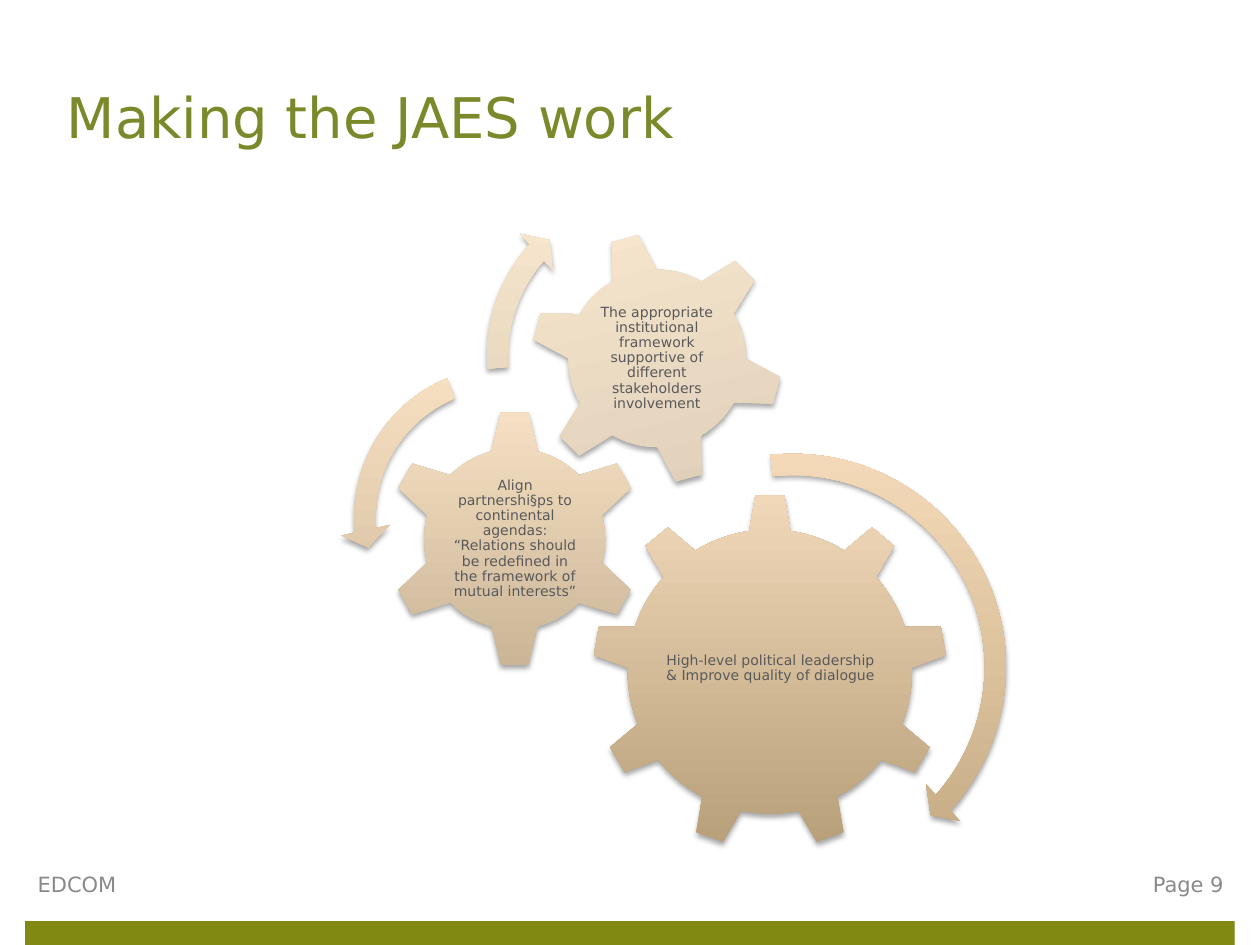
from dataclasses import dataclass

import lxml.etree
import pptx
import pptx.dml.color
import pptx.enum.shapes
import pptx.enum.text
import pptx.oxml.ns
import pptx.util

Cm = pptx.util.Cm
Kind = pptx.enum.shapes.MSO_SHAPE
Align = pptx.enum.text.PP_ALIGN


@dataclass(frozen=True)
class Theme:
    font: str = "DejaVu Sans"
    head: str = "7C892B"
    body: str = "595959"
    foot: str = "898989"
    bar: str = "828912"
    shade: str = "000000"
    dim: str = "808080"
    large: int = 32
    small: int = 12
    tiny: int = 8


@dataclass(frozen=True)
class Box:
    left: float
    top: float
    width: float
    height: float

    def place(self) -> tuple:
        return Cm(self.left), Cm(self.top), Cm(self.width), Cm(self.height)


@dataclass(frozen=True)
class Gear:
    kind: Kind
    box: Box
    dark: str
    light: str
    text: str
    label: Box
    turn: float = 0


@dataclass(frozen=True)
class Arrow:
    kind: Kind
    box: Box
    dark: str
    light: str
    band: float
    angles: tuple[float, float, float]
    tip: float


THEME = Theme()

GEARS = [
    Gear(Kind.GEAR_9, Box(11.94, 9.96, 7.16, 7.16), "B79F79", "F0D8B9",
         "High-level political leadership & Improve quality of dialogue",
         Box(13.39, 11.63, 4.29, 3.68)),
    Gear(Kind.GEAR_6, Box(7.77, 8.26, 5.21, 5.21), "CAB597", "F6E0C3",
         "Align partnershi§ps to continental agendas: “Relations should be "
         "redefined in the framework of mutual interests”",
         Box(9.09, 9.58, 2.59, 2.57)),
    Gear(Kind.GEAR_6, Box(10.69, 4.67, 5.11, 5.11), "DCCCB6", "FBE9D1",
         "The appropriate institutional framework supportive of different "
         "stakeholders involvement",
         Box(11.81, 5.79, 2.87, 2.87), 345),
]

ARROWS = [
    Arrow(Kind.CIRCULAR_ARROW, Box(11.4, 8.86, 9.17, 9.17), "C1A77F", "F5DBB9",
          4.7, (4.98, 42.12, 263.97), 5.5),
    Arrow(Kind.LEFT_CIRCULAR_ARROW, Box(6.86, 7.11, 6.65, 6.65), "CEB99A", "F9E2C3",
          6.5, (7.17, 174.82, 247.3), 7.5),
    Arrow(Kind.CIRCULAR_ARROW, Box(9.53, 3.56, 7.19, 7.19), "DBCBB5", "FBE9D0",
          6, (6.57, 221.9, 175.14), 7),
]


def tint(code: str) -> pptx.dml.color.RGBColor:
    return pptx.dml.color.RGBColor.from_string(code)


def write(shape, text: str, *, size: int, color: str, align=Align.LEFT,
          inset: float | None = None, lead: float | None = None) -> None:
    frame = shape.text_frame
    frame.word_wrap = True
    frame.auto_size = pptx.enum.text.MSO_AUTO_SIZE.NONE
    frame.vertical_anchor = pptx.enum.text.MSO_ANCHOR.MIDDLE
    if inset is not None:
        frame.margin_left = frame.margin_right = Cm(inset)
        frame.margin_top = frame.margin_bottom = Cm(inset)
    line = frame.paragraphs[0]
    line.alignment = align
    line.line_spacing = lead
    run = line.add_run()
    run.text = text
    run.font.name = THEME.font
    run.font.size = pptx.util.Pt(size)
    run.font.color.rgb = tint(color)


def shadow(shape, color: str, blur: float) -> None:
    qn = pptx.oxml.ns.qn
    shape.shadow.inherit = False
    effect = shape._element.spPr.find(qn("a:effectLst"))
    outer = lxml.etree.SubElement(
        effect, qn("a:outerShdw"), blurRad=str(pptx.util.Pt(blur)),
        dist=str(pptx.util.Pt(1.8)), dir="5400000", rotWithShape="0")
    shade = lxml.etree.SubElement(outer, qn("a:srgbClr"), val=color)
    lxml.etree.SubElement(shade, qn("a:alpha"), val="35000")


def draw(slide, part: Gear | Arrow):
    shape = slide.shapes.add_shape(part.kind, *part.box.place())
    shape.fill.gradient()
    shape.fill.gradient_angle = 90
    for stop, code in zip(shape.fill.gradient_stops, (part.dark, part.light)):
        stop.color.rgb = tint(code)
    shape.line.fill.background()
    shadow(shape, THEME.shade, 3.1)
    return shape


def gear(slide, part: Gear) -> None:
    draw(slide, part).rotation = part.turn
    label = slide.shapes.add_textbox(*part.label.place())
    write(label, part.text, size=THEME.tiny, color=THEME.body,
          align=Align.CENTER, inset=0.03, lead=0.9)


def arrow(slide, part: Arrow) -> None:
    shape = draw(slide, part)
    turns = [angle * 0.6 for angle in part.angles]
    for index, value in enumerate([part.band / 100, *turns, part.tip / 100]):
        shape.adjustments[index] = value


def main() -> None:
    deck = pptx.Presentation()
    deck.slide_width, deck.slide_height = Cm(25.4), Cm(19.05)
    slide = deck.slides.add_slide(deck.slide_layouts[5])

    bar = slide.shapes.add_shape(Kind.RECTANGLE, *Box(0.51, 18.57, 24.38, 0.51).place())
    bar.fill.solid()
    bar.fill.fore_color.rgb = tint(THEME.bar)
    bar.line.fill.background()
    shadow(bar, THEME.dim, 0)

    for part in GEARS:
        gear(slide, part)
    for part in ARROWS:
        arrow(slide, part)

    title = slide.shapes.title
    title.left, title.top, title.width, title.height = Box(1.09, 0.76, 23.04, 3.18).place()
    write(title, "Making the JAES work", size=THEME.large, color=THEME.head)

    for text, box, align in (
        ("EDCOM", Box(0.51, 17.32, 5.21, 1.02), Align.LEFT),
        ("Page 9", Box(21.11, 17.32, 3.81, 1.02), Align.RIGHT),
    ):
        foot = slide.shapes.add_textbox(*box.place())
        write(foot, text, size=THEME.small, color=THEME.foot, align=align)

    deck.save("out.pptx")


if __name__ == "__main__":
    main()
